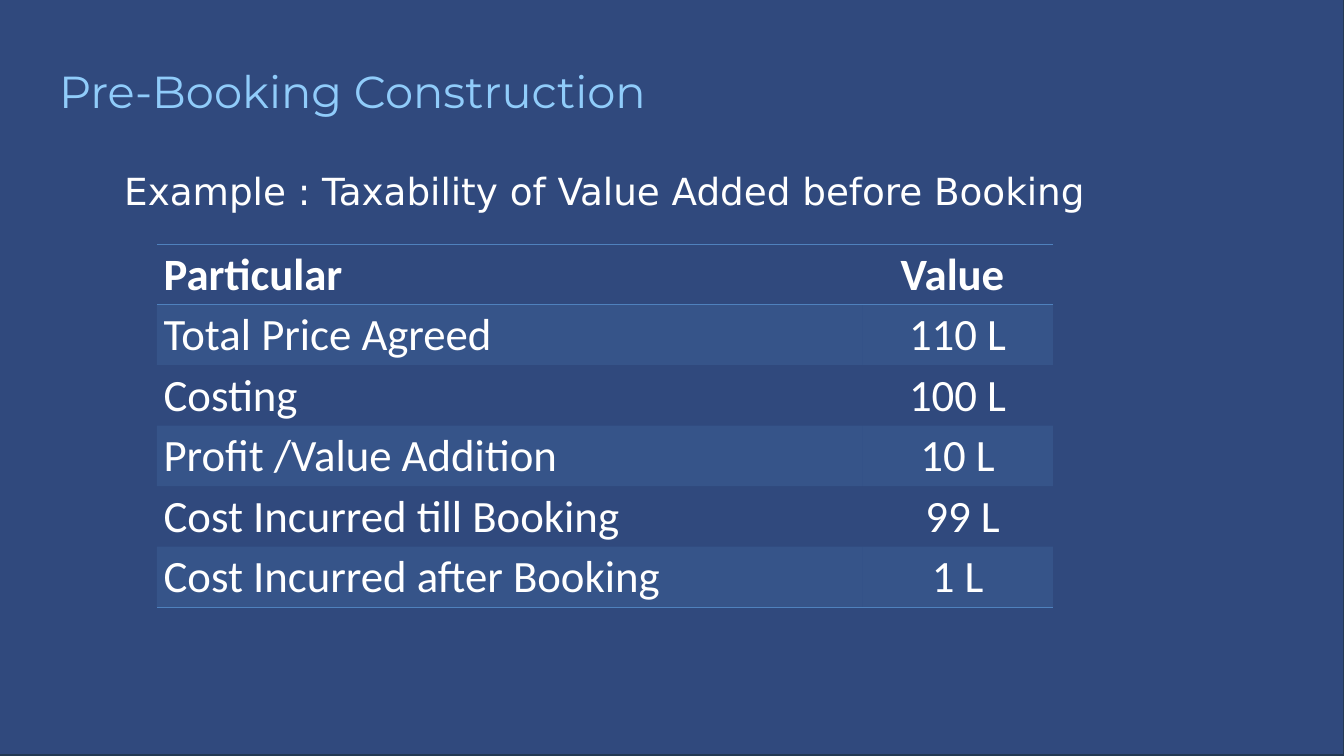
from lxml import etree
from pptx import Presentation
from pptx.dml.color import RGBColor
from pptx.enum import shapes, text
from pptx.oxml import ns
from pptx.util import Pt

NAVY = RGBColor(0x00, 0x20, 0x60)
EDGE = RGBColor(0x23, 0x39, 0x53)
SKY = RGBColor(0x90, 0xCC, 0xFA)
BLUE = RGBColor(0x4F, 0x81, 0xBD)
WHITE = RGBColor(0xFF, 0xFF, 0xFF)

PLAIN_TABLE = "{2D5ABB26-0587-4C30-8999-92F81FD0307C}"
ROWS = [
    ("Particular", "Value "),
    ("Total Price Agreed", "110 L"),
    ("Costing", "100 L"),
    ("Profit /Value Addition", "10 L"),
    ("Cost Incurred till Booking", " 99 L"),
    ("Cost Incurred after Booking", "1 L"),
]


def fill_solid(fill, color, opacity):
    """Fill with a colour at an opacity given in percent."""
    fill.solid()
    fill.fore_color.rgb = color
    tone = fill._xPr.find(".//" + ns.qn("a:srgbClr"))
    etree.SubElement(tone, ns.qn("a:alpha"), val=str(opacity * 1000))


def write(frame, words, color, **font):
    para = frame.paragraphs[0]
    span = para.add_run()
    span.text = words
    span.font.color.rgb = color
    for name, value in font.items():
        setattr(span.font, name, value)
    return para


def add_backdrop(page, left, top, width, height):
    panel = page.shapes.add_shape(
        shapes.MSO_SHAPE.RECTANGLE, Pt(left), Pt(top), Pt(width), Pt(height))
    panel.shadow.inherit = False
    fill_solid(panel.fill, NAVY, 81)
    panel.line.color.rgb = EDGE
    panel.line.width = Pt(2)


def add_label(page, left, top, width, height, words, color, inset=None, **font):
    box = page.shapes.add_textbox(Pt(left), Pt(top), Pt(width), Pt(height))
    frame = box.text_frame
    frame.word_wrap = True
    if inset is not None:
        for side in ("left", "top", "right", "bottom"):
            setattr(frame, f"margin_{side}", Pt(inset))
    write(frame, words, color, **font)


def add_rule(cell, position, tag):
    """Draw one cell border; borders come before the fill in the cell's XML."""
    line = etree.Element(ns.qn(tag), w=str(Pt(1)))
    solid = etree.SubElement(line, ns.qn("a:solidFill"))
    etree.SubElement(solid, ns.qn("a:srgbClr"), val=str(BLUE))
    cell._tc.get_or_add_tcPr().insert(position, line)


def add_value_table(page, left, top, widths, row_height):
    last = len(ROWS) - 1
    holder = page.shapes.add_table(
        len(ROWS), len(widths), Pt(left), Pt(top),
        Pt(sum(widths)), Pt(row_height * len(ROWS)))
    table = holder.table
    table._tbl.tblPr.find(ns.qn("a:tableStyleId")).text = PLAIN_TABLE
    for column, width in zip(table.columns, widths):
        column.width = Pt(width)

    for r, row in enumerate(ROWS):
        for c, words in enumerate(row):
            cell = table.cell(r, c)
            para = write(cell.text_frame, words, WHITE,
                         name="Calibri", size=Pt(48), bold=r == 0)
            if c == 1:
                para.alignment = text.PP_ALIGN.CENTER
            if r % 2:
                fill_solid(cell.fill, BLUE, 20)
            else:
                cell.fill.background()
            if r in (0, last):
                add_rule(cell, 0, "a:lnB")
            if r == 0:
                add_rule(cell, 0, "a:lnT")


def main():
    deck = Presentation()
    deck.slide_width, deck.slide_height = Pt(1440), Pt(810)
    page = deck.slides.add_slide(deck.slide_layouts[6])
    add_backdrop(page, -31.7, -1.4, 1471.7, 810)
    add_label(page, 49, 54, 1227.6, 149.8, "Pre-Booking Construction", SKY,
              inset=14.4, name="Montserrat", size=Pt(48))
    add_value_table(page, 168, 261.4, (756, 204), 64.8)
    add_label(page, 126, 177.1, 1056, 55.4,
              "Example : Taxability of Value Added before Booking", WHITE,
              name="DejaVu Sans", size=Pt(40))
    deck.save("out.pptx")


if __name__ == "__main__":
    main()
